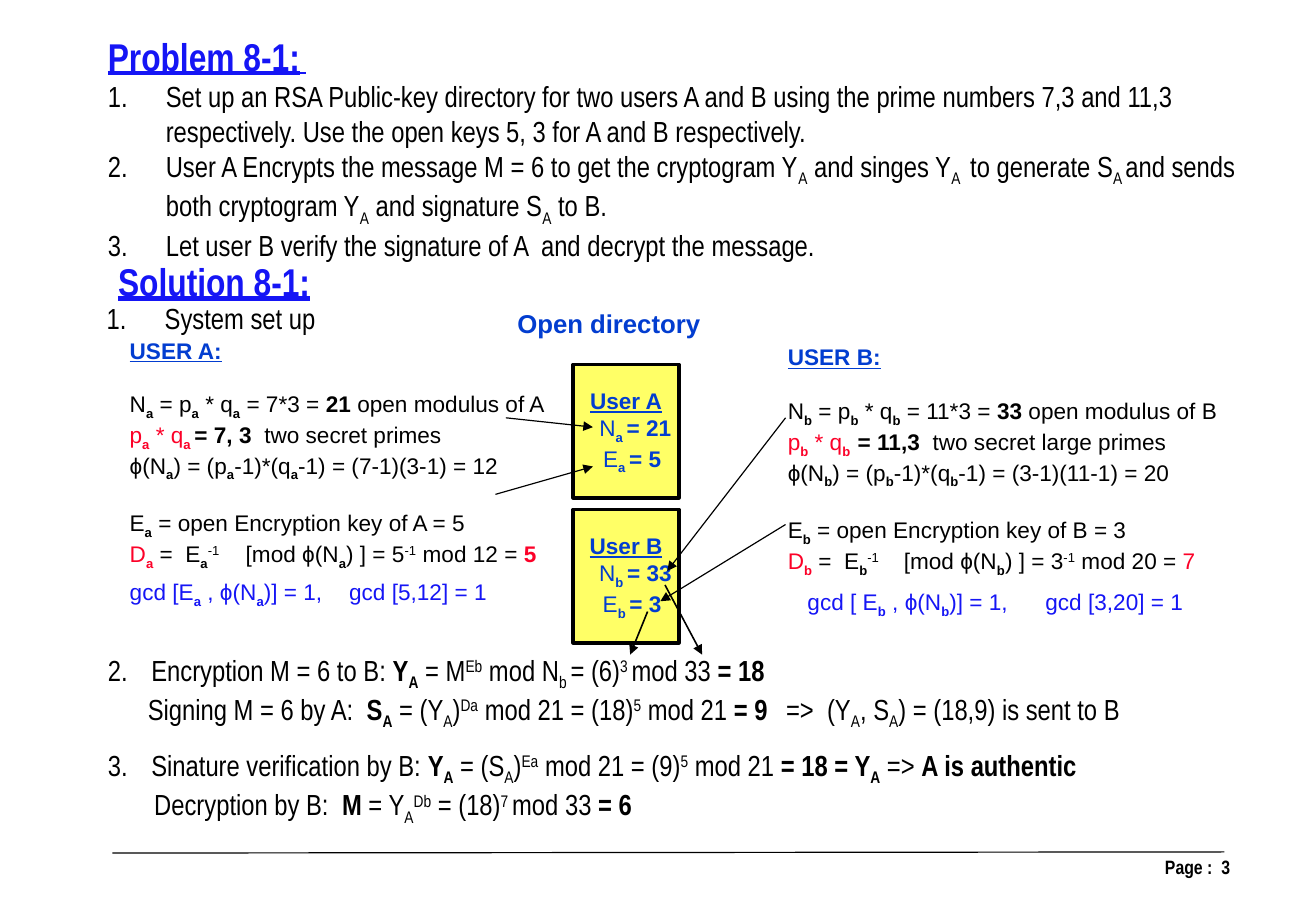
"""Build the slide on RSA problem 8-1 and its solution."""
from lxml.etree import SubElement
from pptx import Presentation
from pptx.dml.color import RGBColor
from pptx.enum.shapes import MSO_CONNECTOR, MSO_SHAPE
from pptx.enum.text import MSO_ANCHOR, PP_ALIGN
from pptx.oxml.ns import qn
from pptx.util import Pt


def rgb(color):
    """Turn a hex string into a colour."""
    return RGBColor.from_string(color)


def add_text(tf, text, font="Arial", size=14, color="000000", bold=False,
             underline=False, align=PP_ALIGN.LEFT, before=0, indent=0,
             hang=0, number=0):
    """Add a paragraph of runs split by |, each with optional flags before ~."""
    p = tf.paragraphs[0]
    if p.runs:
        p = tf.add_paragraph()
    p.alignment = align
    p.space_before = Pt(before)
    pPr = p._p.get_or_add_pPr()
    pPr.set("marL", str(Pt(indent)))
    pPr.set("indent", str(Pt(-hang)))
    if number:
        SubElement(pPr, qn("a:buAutoNum"), type="arabicPeriod", startAt=str(number))
    for part in text.split("|"):
        flags, _, words = part.rpartition("~")
        r = p.add_run()
        r.text = words
        r.font.name = font
        r.font.size = Pt(18 if "s" in flags else size)
        r.font.bold = "b" in flags or (bold and "s" not in flags)
        r.font.underline = underline
        r.font.color.rgb = rgb(Board.red if "r" in flags else color)
        if "_" in flags:
            r.font._element.set("baseline", "-25000")
        if "^" in flags:
            r.font._element.set("baseline", "30000")


class Board:
    """Hold the style and the slide being drawn."""
    narrow, red, blue, link = "Arial Narrow", "FC0128", "023DD0", "1515F5"
    body = dict(font=narrow, size=18)
    heading = dict(font=narrow, size=24, color=link, bold=True, underline=True)

    def __init__(self, prs):
        """Add a blank slide."""
        self.s = prs.slides.add_slide(prs.slide_layouts[6])

    def frame(self, sp, inset_x, inset_y, anchor):
        """Set up the text frame of a shape."""
        tf = sp.text_frame
        tf.word_wrap = True
        tf.vertical_anchor = anchor
        tf.margin_left = tf.margin_right = Pt(inset_x)
        tf.margin_top = tf.margin_bottom = Pt(inset_y)
        return tf

    def box(self, x, y, w, h, inset_x=7.2, inset_y=3.6, anchor=MSO_ANCHOR.TOP):
        """Add a text box and return its text frame."""
        sp = self.s.shapes.add_textbox(Pt(x), Pt(y), Pt(w), Pt(h))
        return self.frame(sp, inset_x, inset_y, anchor)

    def entry(self, y, user, key, n, e):
        """Add one user's entry in the open directory."""
        sp = self.s.shapes.add_shape(MSO_SHAPE.RECTANGLE, Pt(355.7), Pt(y),
                                     Pt(65.5), Pt(82.8))
        sp.shadow.inherit = False
        sp.fill.solid()
        sp.fill.fore_color.rgb = rgb("FFFF66")
        sp.line.color.rgb = rgb("000000")
        sp.line.width = Pt(2.25)
        tf = self.frame(sp, 0, 0, MSO_ANCHOR.MIDDLE)
        style = dict(color=self.blue, align=PP_ALIGN.CENTER)
        add_text(tf, f"User {user}", bold=True, underline=True, **style)
        add_text(tf, f"N|b_~{key} |b~= {n}", indent=11.5, **style)
        add_text(tf, f"E|b_~{key} |b~= {e}", indent=7.5, **style)

    def user(self, x, y, user, key, product, n, primes, kind, phi, phi_value, e, d):
        """Add one user's key computation."""
        tf = self.box(x, y, 288, 160)
        sub = f"|b_~{key}|"
        add_text(tf, f"USER {user}:", color=self.blue, bold=True, underline=True)
        add_text(tf, f"N{sub} = p{sub} * q{sub} = {product} = |b~{n}| open modulus of {user}",
                 before=16.5)
        add_text(tf, f"r~p|rb_~{key}|r~ * q|rb_~{key} {primes}  |{kind}")
        add_text(tf, f"ϕ(N{sub}) = (p{sub}-1)*(q{sub}-1) = {phi} = {phi_value}")
        add_text(tf, f"E{sub} = open Encryption key of {user} = {e}", before=16.5)
        add_text(tf, f"r~D|rb_~{key}| =  E{sub}^~-1|\t[mod ϕ(N{sub}) ] = {e}|^~-1"
                     f"| mod {phi_value} = |{d}")

    def line(self, x1, y1, x2, y2, width=0.75, arrow=True):
        """Add a straight line, with an arrowhead at its end if wanted."""
        c = self.s.shapes.add_connector(MSO_CONNECTOR.STRAIGHT, Pt(x1), Pt(y1),
                                        Pt(x2), Pt(y2))
        c.line.color.rgb = rgb("000000")
        c.line.width = Pt(width)
        if arrow:
            SubElement(c.line._get_or_add_ln(), qn("a:tailEnd"), type="triangle")
        SubElement(c._element.spPr, qn("a:effectLst"))


def main():
    """Draw the slide and save it."""
    prs = Presentation()
    prs.slide_width, prs.slide_height = Pt(816.5), Pt(567)
    prs.element.sldSz.attrib.pop("type", None)
    board = Board(prs)
    body = board.body

    board.line(69.8, 529.2, 759.6, 528.5, arrow=False)
    tf = board.box(586, 526.3, 185.8, 24, 8.6, 4.3)
    add_text(tf, "Page :  3", font=board.narrow, size=12, bold=True, align=PP_ALIGN.RIGHT)

    tf = board.box(59.8, 18.7, 738, 145.4, anchor=MSO_ANCHOR.MIDDLE)
    add_text(tf, "Problem 8-1:|s~ ", **board.heading)
    tasks = [
        "Set up an RSA Public-key directory for two users A and B using the prime "
        "numbers 7,3 and 11,3 respectively. Use the open keys 5, 3 for A and B respectively.",
        "User A Encrypts the message M = 6 to get the cryptogram Y|_~A| and singes Y|_~A "
        "| to generate S|_~A |and sends both cryptogram Y|_~A| and signature S|_~A| to B.",
        "Let user B verify the signature of A  and decrypt the message.",
    ]
    for i, task in enumerate(tasks, 1):
        add_text(tf, task, indent=36, hang=36, number=i, **body)

    add_text(board.box(66.2, 156.2, 168, 36.7), "Solution 8-1:", **board.heading)
    add_text(board.box(66.2, 186.5, 131, 21.6, 0, 0), "System set up",
             indent=36, hang=36, number=1, **body)
    add_text(board.box(313.9, 187.2, 198, 26.6), "Open directory",
             size=16, color=board.blue, bold=True)

    board.entry(316.1, "B", "b", 33, 3)
    board.entry(226.1, "A", "a", 21, 5)
    board.user(73.4, 205.2, "A", "a", "7*3", 21, "|b~= 7, 3", "two secret primes",
               "(7-1)(3-1)", 12, 5, "rb~5")
    board.user(481.7, 209.5, "B", "b", "11*3", 33, " |b~= 11,3", "two secret large primes",
               "(3-1)(11-1)", 20, 3, "r~7")

    for x, y, text in [
        (73.4, 355, "gcd [E|b_~a| , ϕ(N|b_~a|)] = 1,"),
        (209.5, 355, "gcd [5,12] = 1"),
        (493.9, 361.4, "gcd [ E|b_~b| , ϕ(N|b_~b|)] = 1,"),
        (641.5, 361.4, "gcd [3,20] = 1"),
    ]:
        add_text(board.box(x, y, 170, 24), text, color=board.link)

    tf = board.box(59.8, 401, 661, 51)
    add_text(tf, "Encryption M = 6 to B: |b~Y|b_~A| = M|^~Eb| mod N|_~b |= (6)|^~3 |mod 33 "
                 "|b~= 18", indent=27, hang=27, number=2, **body)
    add_text(tf, "Signing M = 6 by A:  |b~S|b_~A| = (Y|_~A|)|^~Da| mod 21 = (18)|^~5"
                 "| mod 21 |b~= 9|\t=>  (Y|_~A|, S|_~A|) = (18,9) is sent to B",
             indent=24.8, **body)

    tf = board.box(59.8, 460, 661, 51)
    add_text(tf, "Sinature verification by B: |b~Y|b_~A| = (S|_~A|)|^~Ea| mod 21 = (9)|^~5"
                 "| mod 21|b~ = 18 = Y|b_~A| => |b~A is authentic",
             indent=27, hang=27, number=3, **body)
    add_text(tf, "Decryption by B:  |b~M| = Y|_~A|^~Db| = (18)|^~7 |mod 33 |b~= 6",
             indent=28.8, **body)

    for ends in [
        (313.9, 259.2, 367.9, 265),
        (307.4, 306.7, 367.9, 289.4),
        (487.4, 259.2, 414, 354.2),
        (487.4, 325.4, 409.7, 373),
        (412.6, 362.9, 435.6, 406.1, 1),
        (401.8, 379.4, 391, 406.1, 1),
    ]:
        board.line(*ends)

    prs.save("out.pptx")


if __name__ == "__main__":
    main()
